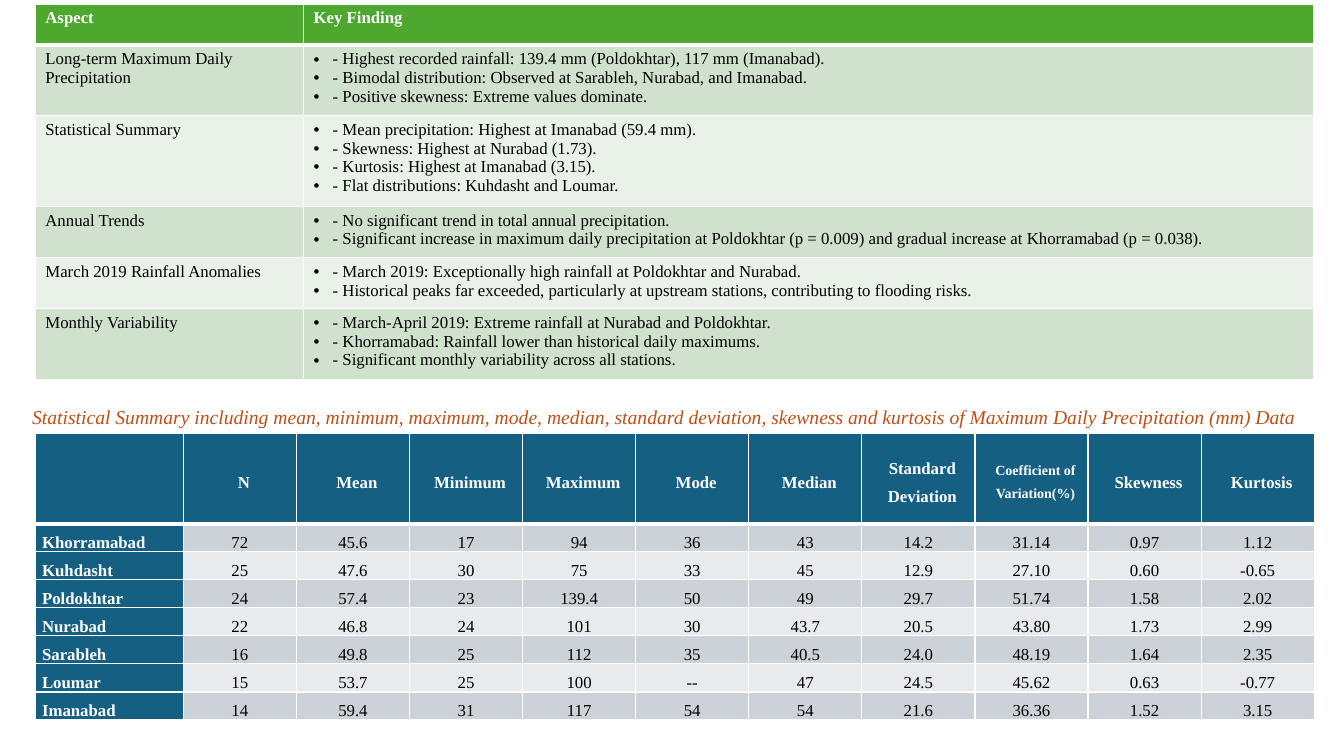
import pptx
import pptx.dml.color
import pptx.enum.text
import pptx.oxml
import pptx.oxml.ns
import pptx.util
from pptx.dml.color import RGBColor
from pptx.enum.text import MSO_ANCHOR, PP_ALIGN
from pptx.util import Cm

FINDINGS = [
    ("Long-term Maximum Daily Precipitation", [
        "- Highest recorded rainfall: 139.4 mm (Poldokhtar), 117 mm (Imanabad).",
        "- Bimodal distribution: Observed at Sarableh, Nurabad, and Imanabad.",
        "- Positive skewness: Extreme values dominate.",
    ]),
    ("Statistical Summary", [
        "- Mean precipitation: Highest at Imanabad (59.4 mm).",
        "- Skewness: Highest at Nurabad (1.73).",
        "- Kurtosis: Highest at Imanabad (3.15).",
        "- Flat distributions: Kuhdasht and Loumar.",
    ]),
    ("Annual Trends", [
        "- No significant trend in total annual precipitation.",
        "- Significant increase in maximum daily precipitation at Poldokhtar (p = 0.009) "
        "and gradual increase at Khorramabad (p = 0.038).",
    ]),
    ("March 2019 Rainfall Anomalies", [
        "- March 2019: Exceptionally high rainfall at Poldokhtar and Nurabad.",
        "- Historical peaks far exceeded, particularly at upstream stations, "
        "contributing to flooding risks.",
    ]),
    ("Monthly Variability", [
        "- March-April 2019: Extreme rainfall at Nurabad and Poldokhtar.",
        "- Khorramabad: Rainfall lower than historical daily maximums.",
        "- Significant monthly variability across all stations.",
    ]),
]
FINDING_HEADER = ("Aspect", "Key Finding")
CAPTION = ("Statistical Summary including mean, minimum, maximum, mode, median, standard deviation, "
           "skewness and kurtosis of Maximum Daily Precipitation (mm) Data")
VARIATION = "Coefficient of Variation(%)"
STATISTICS_HEADER = ("", "N", "Mean", "Minimum", "Maximum", "Mode", "Median",
                     "Standard Deviation", VARIATION, "Skewness", "Kurtosis")
STATIONS = [
    ("Khorramabad", "72", "45.6", "17", "94", "36", "43", "14.2", "31.14", "0.97", "1.12"),
    ("Kuhdasht", "25", "47.6", "30", "75", "33", "45", "12.9", "27.10", "0.60", "-0.65"),
    ("Poldokhtar", "24", "57.4", "23", "139.4", "50", "49", "29.7", "51.74", "1.58", "2.02"),
    ("Nurabad", "22", "46.8", "24", "101", "30", "43.7", "20.5", "43.80", "1.73", "2.99"),
    ("Sarableh", "16", "49.8", "25", "112", "35", "40.5", "24.0", "48.19", "1.64", "2.35"),
    ("Loumar", "15", "53.7", "25", "100", "--", "47", "24.5", "45.62", "0.63", "-0.77"),
    ("Imanabad", "14", "59.4", "31", "117", "54", "54", "21.6", "36.36", "1.52", "3.15"),
]

WHITE = RGBColor(0xFF, 0xFF, 0xFF)
BLACK = RGBColor(0x00, 0x00, 0x00)
GREEN = RGBColor(0x4E, 0xA7, 0x2E)
GREEN_BANDS = (RGBColor(0xD0, 0xE1, 0xCD), RGBColor(0xE9, 0xF1, 0xE8))
BLUE = RGBColor(0x15, 0x60, 0x82)
BLUE_BANDS = (RGBColor(0xCC, 0xD2, 0xD8), RGBColor(0xE8, 0xEA, 0xED))
ORANGE = RGBColor(0xC0, 0x4F, 0x15)
FONT = "Times New Roman"
LEFT = 0.89


def add_span(para, text, color, size=12, bold=False, italic=False):
    span = para.add_run()
    span.text = text
    span.font.name = FONT
    span.font.size = pptx.util.Pt(size)
    span.font.bold = bold
    span.font.italic = italic
    span.font.color.rgb = color


def indent(para, margin, first=0.0, bullet=None):
    properties = para._p.get_or_add_pPr()
    properties.set("marL", str(Cm(margin)))
    properties.set("indent", str(Cm(first)))
    if bullet:
        for tag, name, value in (("buFont", "typeface", "Arial"), ("buChar", "char", bullet)):
            mark = pptx.oxml.parse_xml(f'<a:{tag} {pptx.oxml.ns.nsdecls("a")}/>')
            mark.set(name, value)
            properties.append(mark)


def style_cell(cell, color, row):
    cell.fill.solid()
    cell.fill.fore_color.rgb = color
    widths = {"L": 1, "R": 1, "T": 3 if row == 1 else 1, "B": 3 if row == 0 else 1}
    for place, (side, width) in enumerate(widths.items()):
        border = pptx.oxml.parse_xml(
            f'<a:ln{side} {pptx.oxml.ns.nsdecls("a")} w="{pptx.util.Pt(width)}">'
            f'<a:solidFill><a:srgbClr val="{WHITE}"/></a:solidFill></a:ln{side}>')
        cell._tc.get_or_add_tcPr().insert(place, border)


def add_grid(slide, top, widths, heights):
    frame = slide.shapes.add_table(len(heights), len(widths), Cm(LEFT), Cm(top),
                                   Cm(sum(widths)), Cm(sum(heights)))
    for column, width in zip(frame.table.columns, widths):
        column.width = Cm(width)
    for row, height in zip(frame.table.rows, heights):
        row.height = Cm(height)
    return frame.table


def add_findings(slide):
    heights = [1.03] + [0.33 + 0.48 * len(points) for _, points in FINDINGS]
    table = add_grid(slide, 0.1, [6.76, 25.45], heights)
    for column, heading in enumerate(FINDING_HEADER):
        cell = table.cell(0, column)
        style_cell(cell, GREEN, 0)
        add_span(cell.text_frame.paragraphs[0], heading, WHITE, bold=True)
    for row, (aspect, points) in enumerate(FINDINGS, 1):
        for column in range(2):
            style_cell(table.cell(row, column), GREEN_BANDS[(row - 1) % 2], row)
        add_span(table.cell(row, 0).text_frame.paragraphs[0], aspect, BLACK)
        box = table.cell(row, 1).text_frame
        for number, point in enumerate(points):
            para = box.add_paragraph() if number else box.paragraphs[0]
            indent(para, 0.48, -0.48, "•")
            add_span(para, point, BLACK)


def add_statistics(slide):
    rows = [STATISTICS_HEADER] + STATIONS
    table = add_grid(slide, 10.92, [3.73] + [2.85] * 10, [2.28] + [0.7] * len(STATIONS))
    for row, values in enumerate(rows):
        for column, value in enumerate(values):
            cell = table.cell(row, column)
            heading = row == 0 or column == 0
            style_cell(cell, BLUE if heading else BLUE_BANDS[(row - 1) % 2], row)
            cell.margin_left = cell.margin_right = Cm(0.17)
            cell.margin_top = cell.margin_bottom = 0
            if heading:
                cell.vertical_anchor = MSO_ANCHOR.MIDDLE
            elif STATISTICS_HEADER[column] == VARIATION:
                cell.vertical_anchor = MSO_ANCHOR.BOTTOM
            if not value:
                continue
            para = cell.text_frame.paragraphs[0]
            para.line_spacing = 1.5
            if column:
                para.alignment = PP_ALIGN.CENTER
            if row == 0:
                indent(para, 0.2)
            add_span(para, value, WHITE if heading else BLACK,
                     10 if value == VARIATION else 12, heading)


def add_caption(slide):
    box = slide.shapes.add_textbox(Cm(0.56), Cm(10.08), Cm(32.54), Cm(0.86)).text_frame
    box.word_wrap = False
    box.auto_size = pptx.enum.text.MSO_AUTO_SIZE.SHAPE_TO_FIT_TEXT
    add_span(box.paragraphs[0], CAPTION, ORANGE, 14, italic=True)


def main():
    deck = pptx.Presentation()
    deck.slide_width = Cm(33.87)
    deck.slide_height = Cm(19.05)
    slide = deck.slides.add_slide(deck.slide_layouts[6])
    add_statistics(slide)
    add_caption(slide)
    add_findings(slide)
    deck.save("out.pptx")


if __name__ == "__main__":
    main()
